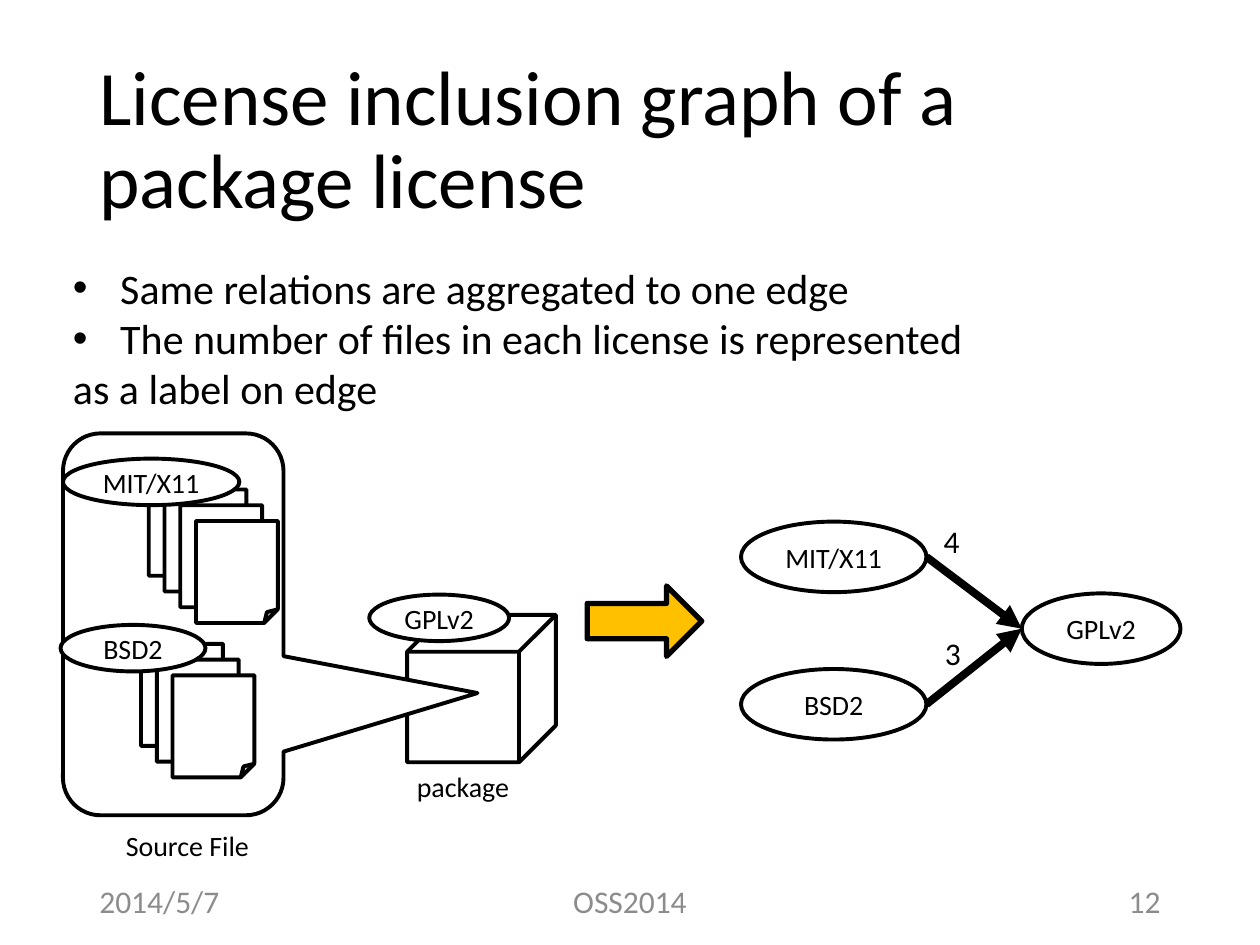
"""Build the slide on the license inclusion graph of a package."""
from dataclasses import dataclass

from lxml import etree
from pptx import Presentation
from pptx.dml.color import RGBColor
from pptx.enum.shapes import MSO_CONNECTOR, MSO_SHAPE
from pptx.enum.text import MSO_ANCHOR, MSO_AUTO_SIZE, PP_ALIGN
from pptx.oxml.ns import qn
from pptx.shapes.autoshape import Shape
from pptx.shapes.shapetree import SlideShapes
from pptx.text.text import TextFrame
from pptx.util import Pt

BLACK = RGBColor(0, 0, 0)
WHITE = RGBColor(255, 255, 255)
GRAY = RGBColor(0x8C, 0x8C, 0x8C)
AMBER = RGBColor(0xFF, 0xC0, 0)
FONT = "Calibri"
LEFT, MID, RIGHT = PP_ALIGN.LEFT, PP_ALIGN.CENTER, PP_ALIGN.RIGHT
CENTER, TOP = MSO_ANCHOR.MIDDLE, MSO_ANCHOR.TOP
GROW = MSO_AUTO_SIZE.SHAPE_TO_FIT_TEXT
OVAL, CUBE = MSO_SHAPE.OVAL, MSO_SHAPE.CUBE
PAGE, ARROW = MSO_SHAPE.FOLDED_CORNER, MSO_SHAPE.RIGHT_ARROW
CALL = MSO_SHAPE.ROUNDED_RECTANGULAR_CALLOUT
LINE = MSO_CONNECTOR.STRAIGHT
STEP = 9


@dataclass(frozen=True)
class Box:
    left: float
    top: float
    width: float
    height: float

    def lengths(self) -> tuple[Pt, Pt, Pt, Pt]:
        return Pt(self.left), Pt(self.top), Pt(self.width), Pt(self.height)


@dataclass(frozen=True)
class Node:
    text: str
    box: Box


@dataclass(frozen=True)
class Label:
    text: str
    box: Box
    size: float
    align: PP_ALIGN = LEFT
    color: RGBColor = BLACK
    wrap: bool = False


@dataclass(frozen=True)
class Stack:
    left: float
    top: float
    count: int
    tag: Node


TITLE = Label("License inclusion graph of a package license",
              Box(49.7, 28.8, 620.6, 104.4), 44, wrap=True)
FOOTERS = (
    Label("2014/5/7", Box(49.7, 500.4, 162, 28.8), 18, LEFT, GRAY, True),
    Label("OSS2014", Box(238.5, 500.4, 243, 28.8), 18, MID, GRAY, True),
    Label("12", Box(508.3, 500.4, 162, 28.8), 18, RIGHT, GRAY, True),
)
LABELS = (
    Label("4", Box(532.1, 294.5, 23.8, 28.8), 18),
    Label("3", Box(532.8, 358.6, 23.8, 28.8), 18),
    Label("package", Box(231.1, 436.3, 67.7, 26.6), 16),
    Label("Source File", Box(64.8, 470.2, 85.7, 26.6), 16),
)
POINTS = Label("Same relations are aggregated to one edge\n"
               "The number of files in each license is represented\n"
               "as a label on edge", Box(34.6, 146.2, 533.5, 94.3), 24)
GOAL = Node("GPLv2", Box(583.9, 339.1, 90.7, 40.3))
PARTS = (
    Node("MIT/X11", Box(423.4, 298.1, 106, 40.3)),
    Node("BSD2", Box(423.4, 382.3, 106, 40.3)),
)
STACKS = (
    Stack(85, 270.7, 4, Node("MIT/X11", Box(36, 262.1, 100.8, 26.6))),
    Stack(80.6, 367.9, 3, Node("BSD2", Box(34.6, 357.1, 82.8, 26.6))),
)
PACK = Node("GPLv2", Box(211, 339.8, 79.9, 26.6))


def write(frame: TextFrame, text: str, size: float, align: PP_ALIGN,
          color: RGBColor) -> None:
    frame.text = text
    for para in frame.paragraphs:
        para.alignment = align
        para.font.size = Pt(size)
        para.font.name = FONT
        para.font.color.rgb = color


def add_label(shapes: SlideShapes, label: Label) -> TextFrame:
    frame = shapes.add_textbox(*label.box.lengths()).text_frame
    write(frame, label.text, label.size, label.align, label.color)
    frame.word_wrap = label.wrap
    frame.vertical_anchor = CENTER if label.wrap else TOP
    if not label.wrap:
        frame.auto_size = GROW
    return frame


def add_form(shapes: SlideShapes, kind: MSO_SHAPE, box: Box,
             fill: RGBColor | None = WHITE, weight: float = 2.25) -> Shape:
    form = shapes.add_shape(kind, *box.lengths())
    form.shadow.inherit = False
    if fill is None:
        form.fill.background()
    else:
        form.fill.solid()
        form.fill.fore_color.rgb = fill
    form.line.color.rgb = BLACK
    form.line.width = Pt(weight)
    return form


def add_node(shapes: SlideShapes, node: Node) -> None:
    frame = add_form(shapes, OVAL, node.box).text_frame
    write(frame, node.text, 16, MID, BLACK)
    frame.word_wrap = False
    frame.vertical_anchor = CENTER


def add_edge(shapes: SlideShapes, start: Box, end: Box) -> None:
    edge = shapes.add_connector(
        LINE, Pt(start.left + start.width), Pt(start.top + start.height / 2),
        Pt(end.left), Pt(end.top + end.height / 2))
    edge.line.color.rgb = BLACK
    edge.line.width = Pt(4.5)
    etree.SubElement(edge.line._get_or_add_ln(), qn("a:tailEnd"),
                     type="triangle")
    etree.SubElement(edge._element.spPr, qn("a:effectLst"))


def add_stack(shapes: SlideShapes, stack: Stack) -> None:
    for i in range(stack.count):
        shift = i * STEP
        add_form(shapes, PAGE,
                 Box(stack.left + shift, stack.top + shift, 46.8, 58.3))
    add_node(shapes, stack.tag)


def add_points(shapes: SlideShapes) -> None:
    frame = add_label(shapes, POINTS)
    for para in frame.paragraphs[:2]:
        props = para._p.get_or_add_pPr()
        props.set("marL", str(Pt(27)))
        props.set("indent", str(-Pt(27)))
        etree.SubElement(props, qn("a:buFont"), typeface="Arial")
        etree.SubElement(props, qn("a:buChar"), char="•")
        props.append(props.find(qn("a:defRPr")))


def main() -> None:
    deck = Presentation()
    deck.slide_width, deck.slide_height = Pt(720), Pt(540)
    shapes = deck.slides.add_slide(deck.slide_layouts[6]).shapes

    add_label(shapes, TITLE).paragraphs[0].line_spacing = 0.9
    add_form(shapes, ARROW, Box(335.5, 334.8, 65.5, 40.3), AMBER, 3)
    for part in PARTS:
        add_node(shapes, part)
        add_edge(shapes, part.box, GOAL.box)
    add_node(shapes, GOAL)
    add_form(shapes, CUBE, Box(232.6, 351.4, 85, 84.2), None)
    call = add_form(shapes, CALL, Box(36, 247.7, 126, 218.2))
    for i, value in enumerate((1.38, 0.18, 0.17)):
        call.adjustments[i] = value
    add_node(shapes, PACK)
    for stack in STACKS:
        add_stack(shapes, stack)
    for label in FOOTERS + LABELS:
        add_label(shapes, label)
    add_points(shapes)
    deck.save("out.pptx")


if __name__ == "__main__":
    main()
